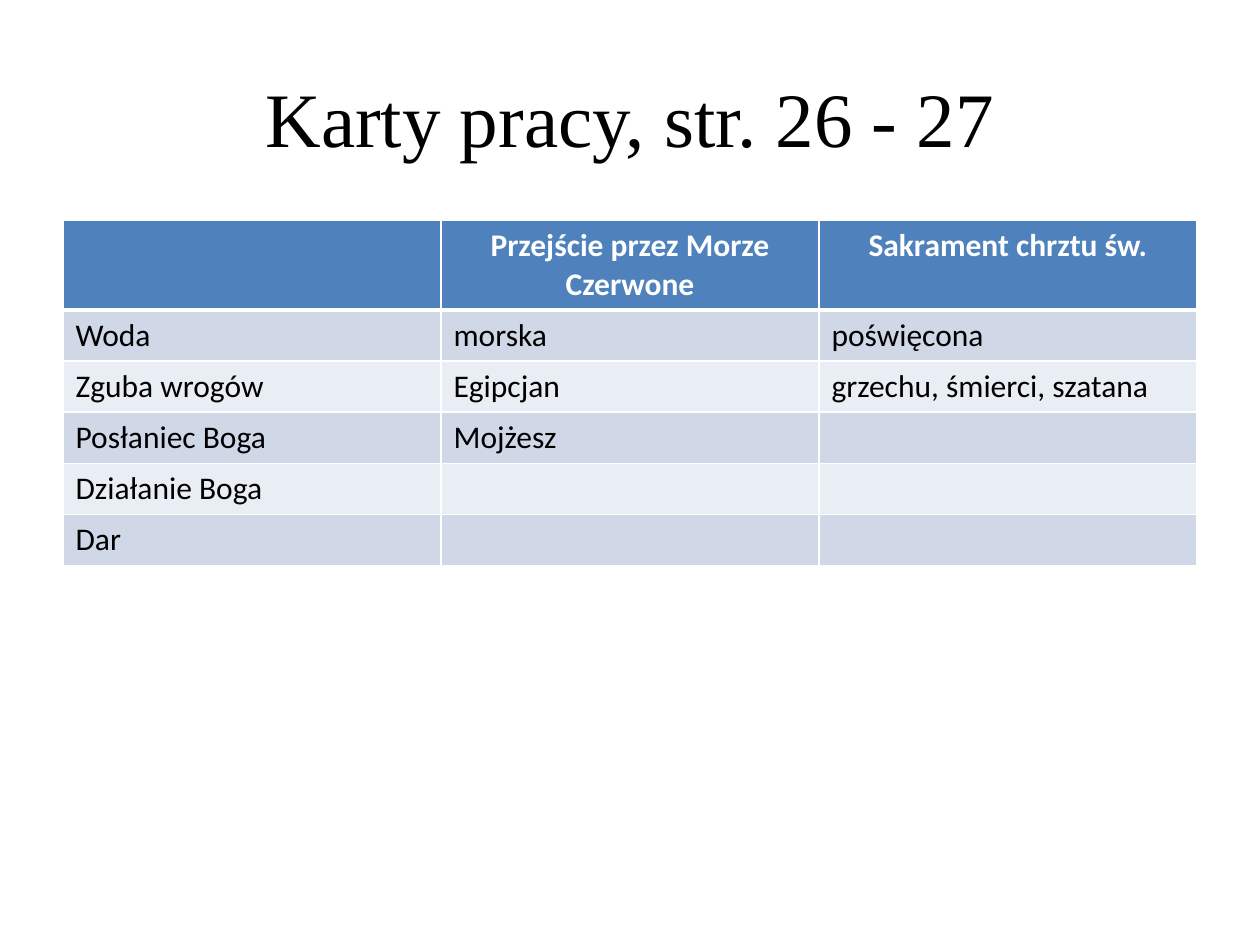
from pptx import Presentation
from pptx.dml.color import RGBColor
from pptx.enum.text import MSO_ANCHOR, PP_ALIGN
from pptx.oxml import parse_xml
from pptx.oxml.ns import nsdecls
from pptx.util import Pt

TITLE = "Karty pracy, str. 26 - 27"
ROWS = [
    ("", "Przejście przez Morze Czerwone", "Sakrament chrztu św."),
    ("Woda", "morska", "poświęcona"),
    ("Zguba wrogów", "Egipcjan", "grzechu, śmierci, szatana"),
    ("Posłaniec Boga", "Mojżesz", ""),
    ("Działanie Boga", "", ""),
    ("Dar", "", ""),
]
HEAD, BANDS = "4F81BD", ("E9EDF4", "D0D8E8")
WHITE, BLACK = "FFFFFF", "000000"
LEFT, WIDTH, HIGH = 36, 648, 29.2


def paint(fmt, color):
    fmt.solid()
    fmt.fore_color.rgb = RGBColor.from_string(color)


def style(para, name, size, color, bold=False):
    font = para.font
    font.name, font.size, font.bold = name, Pt(size), bold
    paint(font.fill, color)


def border(cell, side, width):
    cell._tc.get_or_add_tcPr().append(parse_xml(
        f'<a:ln{side} {nsdecls("a")} w="{Pt(width)}"><a:solidFill>'
        f'<a:srgbClr val="{WHITE}"/></a:solidFill></a:ln{side}>'))


def add_title(slide):
    title = slide.shapes.title
    title.left, title.top = Pt(LEFT), Pt(21.6)
    title.width, title.height = Pt(WIDTH), Pt(90)
    frame = title.text_frame
    frame.text = TITLE
    frame.vertical_anchor = MSO_ANCHOR.MIDDLE
    para = frame.paragraphs[0]
    para.alignment = PP_ALIGN.CENTER
    style(para, "Times New Roman", 44, BLACK)


def add_grid(slide):
    grid = slide.shapes.add_table(
        len(ROWS), len(ROWS[0]), Pt(LEFT), Pt(126),
        Pt(WIDTH), Pt(HIGH * len(ROWS))).table
    for r, row in enumerate(ROWS):
        head = r == 0
        for c, text in enumerate(row):
            cell = grid.cell(r, c)
            for side in "LRTB":
                thick = (r, side) in ((0, "B"), (1, "T"))
                border(cell, side, 3 if thick else 1)
            paint(cell.fill, HEAD if head else BANDS[r % 2])
            cell.text_frame.text = text
            para = cell.text_frame.paragraphs[0]
            para.alignment = PP_ALIGN.CENTER if head else PP_ALIGN.LEFT
            style(para, "Calibri", 18, WHITE if head else BLACK, head)
            for run in para.runs:
                style(run, "Calibri", 18, WHITE if head else BLACK, head)


def main():
    deck = Presentation()
    deck.slide_width, deck.slide_height = Pt(720), Pt(540)
    slide = deck.slides.add_slide(deck.slide_layouts[5])
    add_title(slide)
    add_grid(slide)
    deck.save("out.pptx")


if __name__ == "__main__":
    main()
